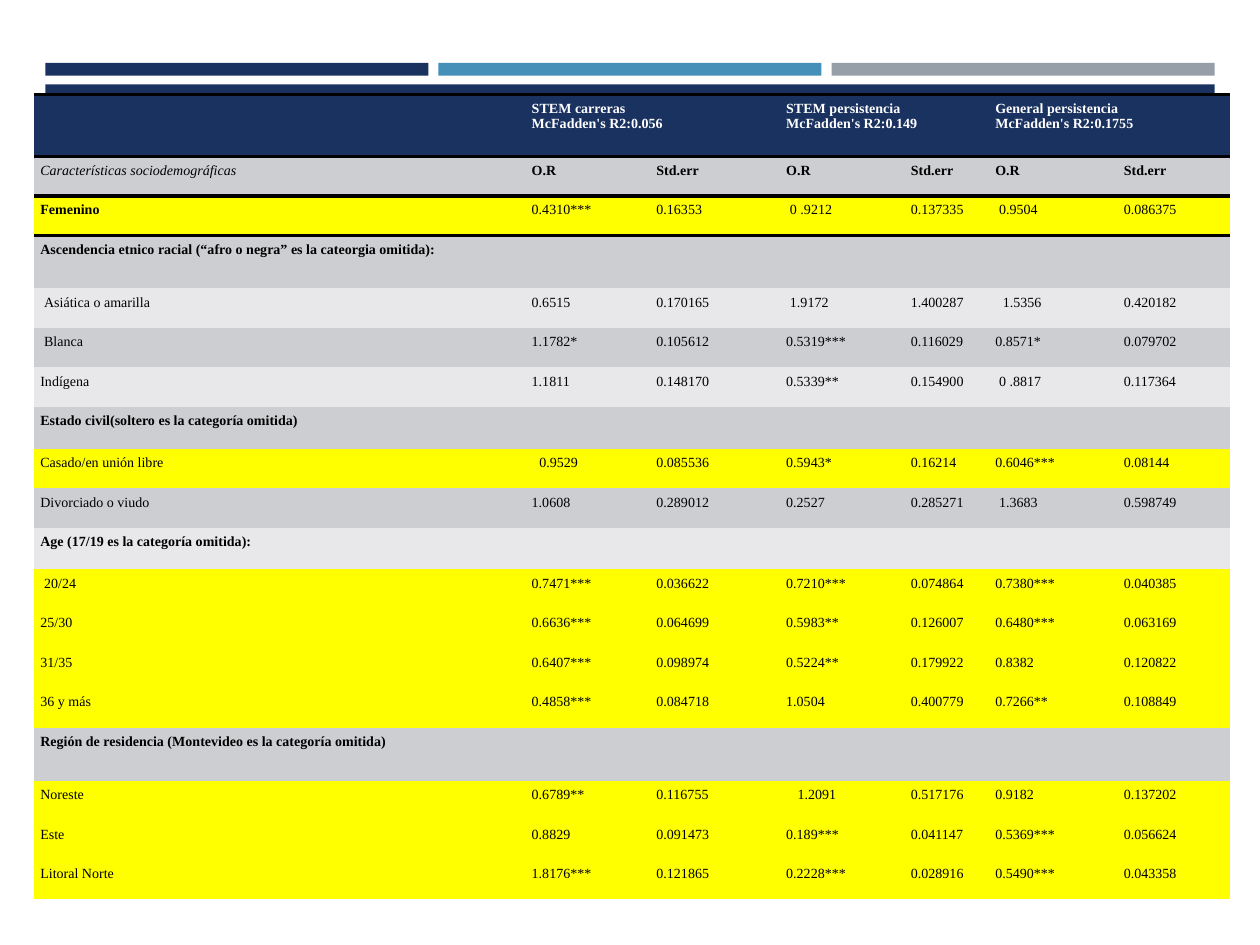
from dataclasses import dataclass

from lxml import etree
from pptx import Presentation
from pptx.dml.color import RGBColor
from pptx.enum.shapes import MSO_SHAPE
from pptx.oxml.ns import qn
from pptx.util import Inches, Pt

RECTANGLE = MSO_SHAPE.RECTANGLE
PLAIN_TABLE_STYLE = "{2D5ABB26-0587-4C30-8999-92F81FD0307C}"


@dataclass(frozen=True)
class Theme:
    font: str = "Times New Roman"
    size: float = 8
    rule_width: float = 2.25
    navy: str = "1A3260"
    blue: str = "4590B8"
    gray: str = "969FA7"
    band_dark: str = "CDCED2"
    band_light: str = "E8E8EA"
    highlight: str = "FFFF00"
    black: str = "000000"
    white: str = "FFFFFF"


THEME = Theme()
DARK, LIGHT, YELLOW = THEME.band_dark, THEME.band_light, THEME.highlight

MODELS = [
    "STEM carreras\nMcFadden's R2:0.056",
    "STEM persistencia\nMcFadden's R2:0.149",
    "General persistencia\nMcFadden's R2:0.1755",
]
MEASURES = ["Características sociodemográficas"] + ["O.R", "Std.err"] * len(MODELS)
RESULTS = [
    (YELLOW, "Femenino", "0.4310***", "0.16353", "0 .9212", "0.137335", "0.9504", "0.086375"),
    (DARK, "Ascendencia etnico racial (“afro o negra” es la cateorgia omitida):"),
    (LIGHT, "Asiática o amarilla", "0.6515", "0.170165", "1.9172", "1.400287", "1.5356", "0.420182"),
    (DARK, "Blanca", "1.1782*", "0.105612", "0.5319***", "0.116029", "0.8571*", "0.079702"),
    (LIGHT, "Indígena", "1.1811", "0.148170", "0.5339**", "0.154900", "0 .8817", "0.117364"),
    (DARK, "Estado civil(soltero es la categoría omitida)"),
    (YELLOW, "Casado/en unión libre", "0.9529", "0.085536", "0.5943*", "0.16214", "0.6046***", "0.08144"),
    (DARK, "Divorciado o viudo", "1.0608", "0.289012", "0.2527", "0.285271", "1.3683", "0.598749"),
    (LIGHT, "Age (17/19 es la categoría omitida):"),
    (YELLOW, "20/24", "0.7471***", "0.036622", "0.7210***", "0.074864", "0.7380***", "0.040385"),
    (YELLOW, "25/30", "0.6636***", "0.064699", "0.5983**", "0.126007", "0.6480***", "0.063169"),
    (YELLOW, "31/35", "0.6407***", "0.098974", "0.5224**", "0.179922", "0.8382", "0.120822"),
    (YELLOW, "36 y más", "0.4858***", "0.084718", "1.0504", "0.400779", "0.7266**", "0.108849"),
    (DARK, "Región de residencia (Montevideo es la categoría omitida)"),
    (YELLOW, "Noreste", "0.6789**", "0.116755", "1.2091", "0.517176", "0.9182", "0.137202"),
    (YELLOW, "Este", "0.8829", "0.091473", "0.189***", "0.041147", "0.5369***", "0.056624"),
    (YELLOW, "Litoral Norte", "1.8176***", "0.121865", "0.2228***", "0.028916", "0.5490***", "0.043358"),
]
INDENT_STEP = 0.03
INDENTS = {
    ("Femenino", 3): 1, ("Femenino", 5): 1,
    ("Asiática o amarilla", 0): 1, ("Asiática o amarilla", 3): 1, ("Asiática o amarilla", 5): 2,
    ("Blanca", 0): 1, ("Indígena", 5): 1,
    ("Casado/en unión libre", 1): 2, ("Divorciado o viudo", 5): 1,
    ("20/24", 0): 1, ("Noreste", 3): 3,
}
COLUMN_WIDTHS = [3.9, 0.99, 1.03, 0.99, 0.67, 1.02, 0.89]
SPECIAL_HEIGHTS = {0: 0.49, 3: 0.42, 7: 0.33, 10: 0.33, 15: 0.42}
CELL_MARGIN = 0.05


def rgb(color):
    return RGBColor.from_string(color)


def write_text(frame, text, color=THEME.black, bold=False, italic=False):
    for index, line in enumerate(text.split("\n")):
        paragraph = frame.add_paragraph() if index else frame.paragraphs[0]
        if not line:
            etree.SubElement(paragraph._p, qn("a:endParaRPr"), sz=str(THEME.size * 100))
            continue
        run = paragraph.add_run()
        run.text = line
        run.font.name = THEME.font
        run.font.size = Pt(THEME.size)
        run.font.color.rgb = rgb(color)
        run.font.bold = bold
        run.font.italic = italic


def add_rule(cell, side):
    line = etree.SubElement(cell._tc.get_or_add_tcPr(), qn(f"a:ln{side}"),
                            w=str(Pt(THEME.rule_width)))
    fill = etree.SubElement(line, qn("a:solidFill"))
    etree.SubElement(fill, qn("a:srgbClr"), val=THEME.black)


def format_cell(cell, fill, text="", rules="", indent=0, **text_format):
    for side in rules:
        add_rule(cell, side)
    cell.fill.solid()
    cell.fill.fore_color.rgb = rgb(fill)
    cell.margin_top = cell.margin_right = cell.margin_bottom = Inches(CELL_MARGIN)
    cell.margin_left = Inches(CELL_MARGIN + indent * INDENT_STEP)
    write_text(cell.text_frame, text, **text_format)


def add_bar(slide, left, top, width, height, color):
    bar = slide.shapes.add_shape(RECTANGLE, Inches(left), Inches(top), Inches(width), Inches(height))
    bar.shadow.inherit = False
    bar.fill.solid()
    bar.fill.fore_color.rgb = rgb(color)
    bar.line.fill.background()


def add_header_bars(slide, left, top, width):
    gap = 0.08
    bar_width = (width - 2 * gap) / 3
    for index, color in enumerate([THEME.navy, THEME.blue, THEME.gray]):
        add_bar(slide, left + index * (bar_width + gap), top, bar_width, 0.1, color)
    add_bar(slide, left, top + 0.17, width, 1.3, THEME.navy)


def fill_headings(table):
    for column in range(len(COLUMN_WIDTHS)):
        model = MODELS[column // 2] if column % 2 and column else ""
        format_cell(table.cell(0, column), THEME.navy, model, rules="TB",
                    color=THEME.white, bold=True)
    for column in range(1, len(COLUMN_WIDTHS), 2):
        table.cell(0, column).merge(table.cell(0, column + 1))
    for column, measure in enumerate(MEASURES):
        format_cell(table.cell(1, column), DARK, measure, rules="TB",
                    bold=column > 0, italic=column == 0)


def fill_results(table):
    for row, (fill, label, *values) in enumerate(RESULTS, start=2):
        texts = [label] + (values or [""] * (len(COLUMN_WIDTHS) - 1))
        label_bold = not values or label == "Femenino"
        for column, text in enumerate(texts):
            format_cell(table.cell(row, column), fill, text, rules="T" if row == 2 else "",
                        indent=INDENTS.get((label, column), 0),
                        bold=label_bold and column == 0)


def add_results_table(slide, left, top, width, height):
    row_count = len(RESULTS) + 2
    table = slide.shapes.add_table(row_count, len(COLUMN_WIDTHS), Inches(left), Inches(top),
                                   Inches(width), Inches(height)).table
    table._tbl.tblPr.find(qn("a:tableStyleId")).text = PLAIN_TABLE_STYLE
    table.horz_banding = False
    for column, column_width in zip(table.columns, COLUMN_WIDTHS):
        column.width = Inches(column_width)
    regular = (height - sum(SPECIAL_HEIGHTS.values())) / (row_count - len(SPECIAL_HEIGHTS))
    for index, row in enumerate(table.rows):
        row.height = Inches(SPECIAL_HEIGHTS.get(index, regular))
    fill_headings(table)
    fill_results(table)


def main():
    presentation = Presentation()
    presentation.slide_width = Inches(10)
    presentation.slide_height = Inches(7.5)
    slide = presentation.slides.add_slide(presentation.slide_layouts[6])
    add_header_bars(slide, 0.36, 0.5, 9.28)
    add_results_table(slide, 0.27, 0.75, 9.49, 6.39)
    presentation.save("out.pptx")


if __name__ == "__main__":
    main()
